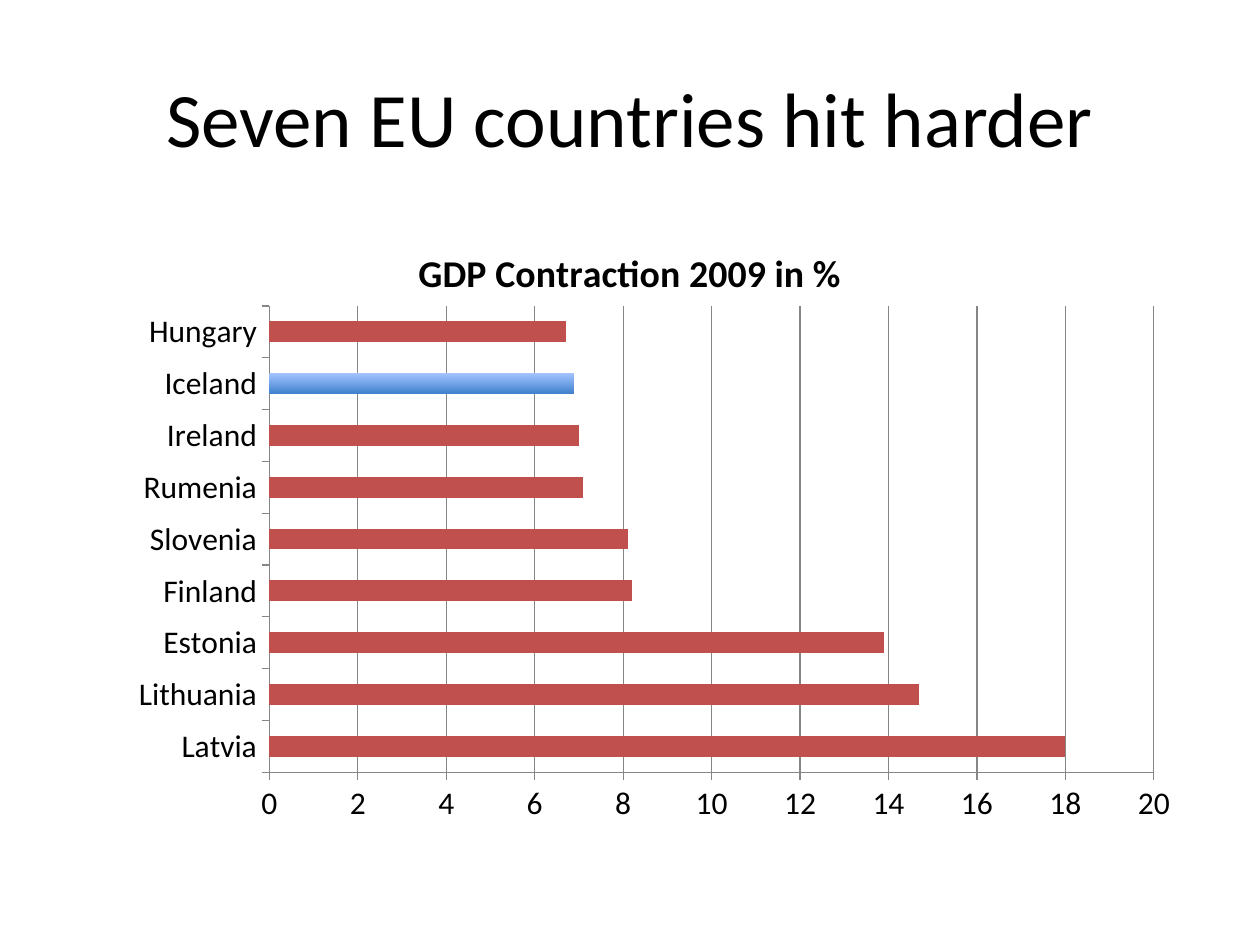
from dataclasses import dataclass

import lxml.etree
import pptx
import pptx.chart.data
import pptx.dml.color
import pptx.enum.chart
import pptx.enum.text
import pptx.oxml.ns
import pptx.util

EMU_PER_PX = 9144
FONT = "Calibri"
BLACK = "000000"
GRID = "868686"
RED = "C0504D"
LIGHT_BLUE = "A3C4FF"
DARK_BLUE = "3F80CD"


@dataclass(frozen=True)
class Box:
    left: int
    top: int
    width: int
    height: int

    def emu(self) -> tuple[int, ...]:
        return tuple(px(v) for v in (self.left, self.top, self.width, self.height))


@dataclass(frozen=True)
class Contraction:
    country: str
    percent: float


CONTRACTIONS = [
    Contraction("Latvia", 18),
    Contraction("Lithuania", 14.7),
    Contraction("Estonia", 13.9),
    Contraction("Finland", 8.2),
    Contraction("Slovenia", 8.1),
    Contraction("Rumenia", 7.1),
    Contraction("Ireland", 7),
    Contraction("Iceland", 6.9),
    Contraction("Hungary", 6.7),
]
HIGHLIGHT = "Iceland"


def px(length: int) -> int:
    return pptx.util.Emu(length * EMU_PER_PX)


def color(value: str) -> pptx.dml.color.RGBColor:
    return pptx.dml.color.RGBColor.from_string(value)


def set_font(font, size: float, bold: bool = False) -> None:
    font.name = FONT
    font.size = pptx.util.Pt(size)
    font.bold = bold
    font.color.rgb = color(BLACK)


def set_line(line) -> None:
    line.color.rgb = color(GRID)
    line.width = pptx.util.Pt(0.75)


def add_heading(slide, box: Box, text: str) -> None:
    frame = slide.shapes.add_textbox(*box.emu()).text_frame
    frame.word_wrap = True
    frame.vertical_anchor = pptx.enum.text.MSO_ANCHOR.MIDDLE
    heading = frame.paragraphs[0]
    heading.text = text
    heading.alignment = pptx.enum.text.PP_ALIGN.CENTER
    set_font(heading.font, 44)


def place_plot(chart, x: float, y: float, w: float, h: float) -> None:
    qn = pptx.oxml.ns.qn
    plot_area = chart.plots[0]._element.getparent()
    for old in plot_area.findall(qn("c:layout")):
        plot_area.remove(old)
    layout = lxml.etree.Element(qn("c:layout"))
    manual = lxml.etree.SubElement(layout, qn("c:manualLayout"))
    settings = {"layoutTarget": "inner", "xMode": "edge", "yMode": "edge",
                "x": x, "y": y, "w": w, "h": h}
    for tag, value in settings.items():
        lxml.etree.SubElement(manual, qn(f"c:{tag}")).set("val", str(value))
    plot_area.insert(0, layout)


def add_contraction_chart(slide, box: Box, title: str) -> None:
    data = pptx.chart.data.CategoryChartData()
    data.categories = [c.country for c in CONTRACTIONS]
    data.add_series("Series 1", [c.percent for c in CONTRACTIONS])
    chart = slide.shapes.add_chart(
        pptx.enum.chart.XL_CHART_TYPE.BAR_CLUSTERED, *box.emu(), data).chart
    set_font(chart.font, 18)
    chart.has_legend = False
    chart.has_title = True
    chart_title = chart.chart_title
    chart_title.include_in_layout = False
    heading = chart_title.text_frame.paragraphs[0]
    heading.text = title
    set_font(heading.font, 21.6, bold=True)

    for axis in (chart.category_axis, chart.value_axis):
        axis.major_tick_mark = pptx.enum.chart.XL_TICK_MARK.OUTSIDE
        axis.minor_tick_mark = pptx.enum.chart.XL_TICK_MARK.NONE
        set_line(axis.format.line)
    percent_axis = chart.value_axis
    percent_axis.minimum_scale, percent_axis.maximum_scale = 0, 20
    percent_axis.major_unit = 2
    percent_axis.tick_labels.number_format = "General"
    percent_axis.tick_labels.number_format_is_linked = False
    percent_axis.has_major_gridlines = True
    set_line(percent_axis.major_gridlines.format.line)

    plot = chart.plots[0]
    plot.gap_width = 150
    plot.vary_by_categories = False
    bars = plot.series[0]
    bars.format.fill.solid()
    bars.format.fill.fore_color.rgb = color(RED)
    position = [c.country for c in CONTRACTIONS].index(HIGHLIGHT)
    highlight = bars.points[position].format.fill
    highlight.gradient()
    highlight.gradient_angle = 270
    for stop, shade in zip(highlight.gradient_stops, (LIGHT_BLUE, DARK_BLUE)):
        stop.color.rgb = color(shade)
    place_plot(chart, 0.18, 0.137, 0.78, 0.748)
    place_plot(chart, 0.182, 0.137, 0.78, 0.748)


def main() -> None:
    deck = pptx.Presentation()
    deck.slide_width, deck.slide_height = px(1000), px(750)
    slide = deck.slides.add_slide(deck.slide_layouts[6])
    add_heading(slide, Box(50, 30, 900, 125), "Seven EU countries hit harder")
    add_contraction_chart(slide, Box(50, 175, 900, 495), "GDP Contraction 2009 in %")
    deck.save("out.pptx")


if __name__ == "__main__":
    main()
